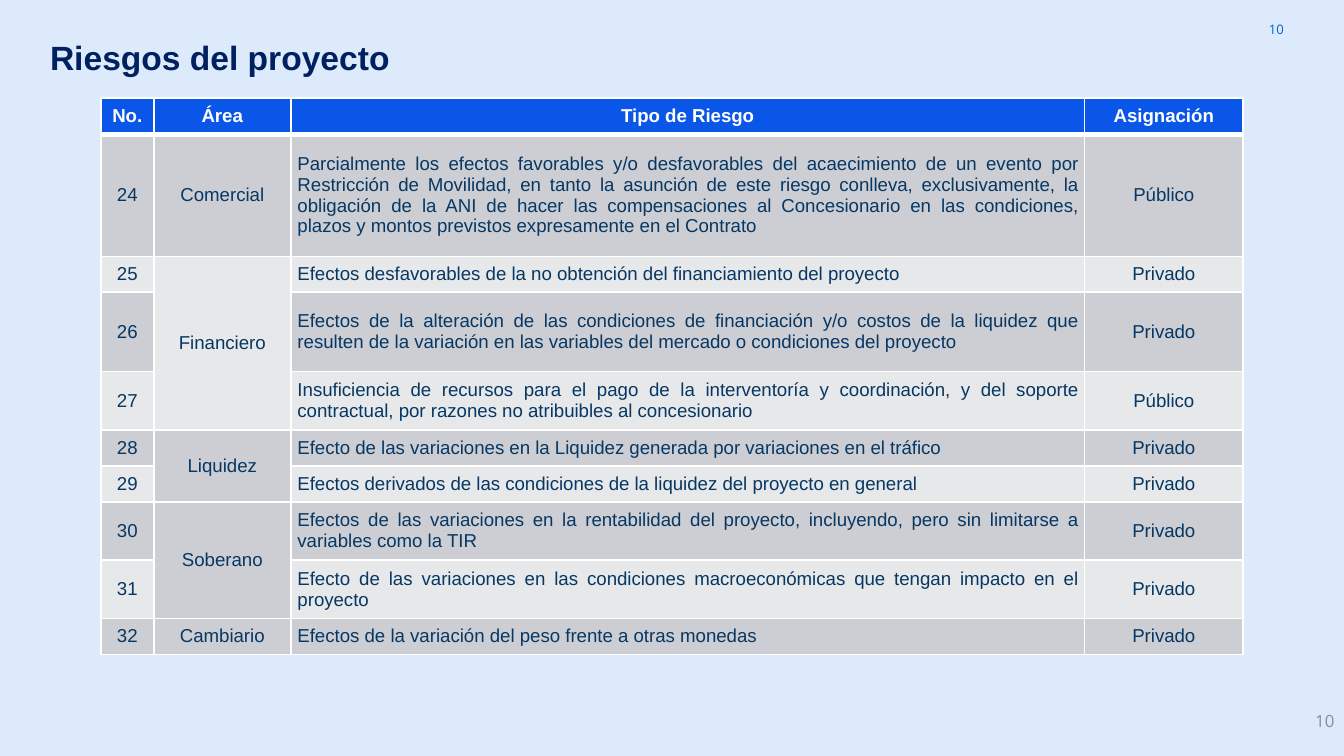
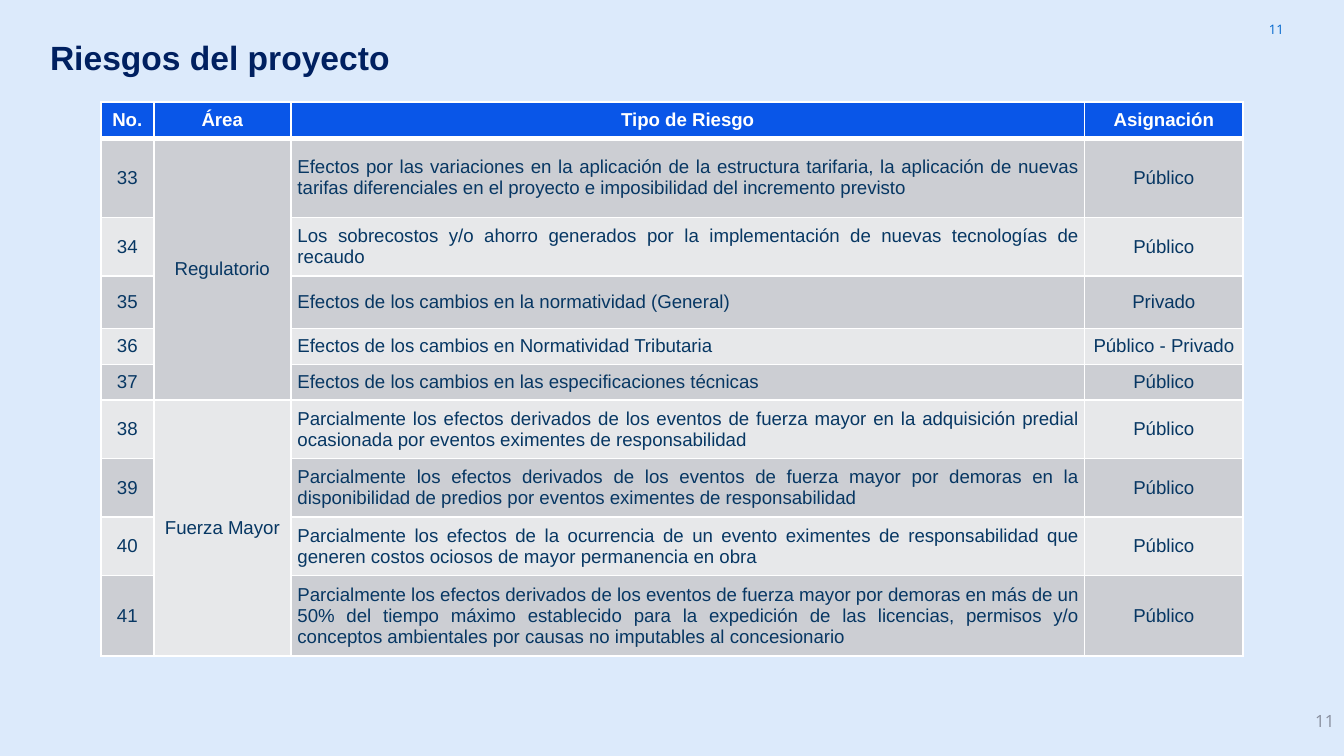
from lxml import etree
from pptx import Presentation
from pptx.dml.color import RGBColor
from pptx.enum.text import MSO_ANCHOR, PP_ALIGN
from pptx.oxml.ns import qn
from pptx.util import Pt

CENTER, JUSTIFY = PP_ALIGN.CENTER, PP_ALIGN.JUSTIFY
LEFT, RIGHT = PP_ALIGN.LEFT, PP_ALIGN.RIGHT
MIDDLE = MSO_ANCHOR.MIDDLE

COLORS = {
    "background": "DCEAFB",
    "title": "002060",
    "top_number": "0066CD",
    "footer_number": "888E9D",
    "header": "0956E8",
    "header_text": "FFFFFF",
    "body_text": "073763",
    "dark_band": "CCCED3",
    "light_band": "E7E8EA",
    "border": "FFFFFF",
}
HEADERS = ["No.", "Área", "Tipo de Riesgo", "Asignación"]
COLUMN_WIDTHS = [28.4, 73.4, 425.2, 85]
COLUMN_ALIGNS = [CENTER, CENTER, JUSTIFY, CENTER]
AREA_COLUMN = 1
CELL_MARGIN = 3.6

# Each risk: area (empty when it continues the one above), risk, assignment, row height
RISK_PAGES = [
    {"page": 10, "first_risk": 24, "top": 52.6, "height": 297.4, "header_height": 18.7, "risks": [
        ("Comercial",
         "Parcialmente los efectos favorables y/o desfavorables del acaecimiento de un evento por "
         "Restricción de Movilidad, en tanto la asunción de este riesgo conlleva, exclusivamente, la "
         "obligación de la ANI de hacer las compensaciones al Concesionario en las condiciones, "
         "plazos y montos previstos expresamente en el Contrato", "Público", 65.5),
        ("Financiero",
         "Efectos desfavorables de la no obtención del financiamiento del proyecto", "Privado", 18.7),
        ("",
         "Efectos de la alteración de las condiciones de financiación y/o costos de la liquidez que "
         "resulten de la variación en las variables del mercado o condiciones del proyecto",
         "Privado", 42.5),
        ("",
         "Insuficiencia de recursos para el pago de la interventoría y coordinación, y del soporte "
         "contractual, por razones no atribuibles al concesionario", "Público", 30.2),
        ("Liquidez",
         "Efecto de las variaciones en la Liquidez generada por variaciones en el tráfico",
         "Privado", 18),
        ("",
         "Efectos derivados de las condiciones de la liquidez del proyecto en general", "Privado", 13),
        ("Soberano",
         "Efectos de las variaciones en la rentabilidad del proyecto, incluyendo, pero sin limitarse a "
         "variables como la TIR", "Privado", 30.2),
        ("",
         "Efecto de las variaciones en las condiciones macroeconómicas que tengan impacto en el "
         "proyecto", "Privado", 24.5),
        ("Cambiario",
         "Efectos de la variación del peso frente a otras monedas", "Privado", 18.7),
    ]},
    {"page": 11, "first_risk": 33, "top": 54.7, "height": 295.9, "header_height": 19.4, "risks": [
        ("Regulatorio",
         "Efectos por las variaciones en la aplicación de la estructura tarifaria, la aplicación de nuevas "
         "tarifas diferenciales en el proyecto e imposibilidad del incremento previsto",
         "Público", 42.5),
        ("",
         "Los sobrecostos y/o ahorro generados por la implementación de nuevas tecnologías de "
         "recaudo", "Público", 22.3),
        ("",
         "Efectos de los cambios en la normatividad (General)", "Privado", 28.1),
        ("",
         "Efectos de los cambios en Normatividad Tributaria", "Público - Privado", 13),
        ("",
         "Efectos de los cambios en las especificaciones técnicas", "Público", 0),
        ("Fuerza Mayor",
         "Parcialmente los efectos derivados de los eventos de fuerza mayor en la adquisición predial "
         "ocasionada por eventos eximentes de responsabilidad", "Público", 27.4),
        ("",
         "Parcialmente los efectos derivados de los eventos de fuerza mayor por demoras en la "
         "disponibilidad de predios por eventos eximentes de responsabilidad", "Público", 29.5),
        ("",
         "Parcialmente los efectos de la ocurrencia de un evento eximentes de responsabilidad que "
         "generen costos ociosos de mayor permanencia en obra", "Público", 28.1),
        ("",
         "Parcialmente los efectos derivados de los eventos de fuerza mayor por demoras en más de un "
         "50% del tiempo máximo establecido para la expedición de las licencias, permisos y/o "
         "conceptos ambientales por causas no imputables al concesionario", "Público", 13.7),
    ]},
]


def rgb(color):
    return RGBColor.from_string(COLORS[color])


class RiskDeck:
    def __init__(self):
        self.prs = Presentation()
        self.prs.slide_width, self.prs.slide_height = Pt(720), Pt(405)
        self.slide = None

    def add_slide(self):
        self.slide = self.prs.slides.add_slide(self.prs.slide_layouts[6])
        self.slide.background.fill.solid()
        self.slide.background.fill.fore_color.rgb = rgb("background")

    def style_text(self, paragraph, size, color, align, font="Arial", bold=False):
        paragraph.alignment = align
        for run in paragraph.runs:
            run.font.name, run.font.size, run.font.bold = font, Pt(size), bold
            run.font.color.rgb = rgb(color)

    def add_text(self, text, box, margins, size, color, align, **style):
        frame = self.slide.shapes.add_textbox(*map(Pt, box)).text_frame
        frame.word_wrap, frame.vertical_anchor = True, MIDDLE
        frame.margin_left = frame.margin_right = Pt(margins[0])
        frame.margin_top = frame.margin_bottom = Pt(margins[1])
        frame.text = text
        self.style_text(frame.paragraphs[0], size, color, align, **style)
        return frame

    def add_title(self, text):
        frame = self.add_text(text, (21.6, 24.5, 663.8, 14.4), (5.2, 2.6), 18, "title", LEFT, bold=True)
        frame.paragraphs[0].line_spacing = 0.9

    def add_page_numbers(self, page):
        self.add_text(str(page), (651.6, 0, 43.2, 31), (7.2, 7.2), 7, "top_number", RIGHT, font="Open Sans")
        self.add_text(str(page), (558, 375.1, 162, 21.6), (5.2, 2.6), 9, "footer_number", RIGHT,
                      font="Open Sans")

    def add_borders(self, cell, bottom):
        properties = cell._tc.get_or_add_tcPr()
        for side, width in (("L", 1), ("R", 1), ("T", 1), ("B", bottom)):
            line = etree.SubElement(properties, qn(f"a:ln{side}"), w=str(Pt(width)))
            fill = etree.SubElement(line, qn("a:solidFill"))
            etree.SubElement(fill, qn("a:srgbClr"), val=COLORS["border"])

    def fill_cell(self, cell, text, fill, color, align, bold=False, bottom=1):
        self.add_borders(cell, bottom)
        cell.fill.solid()
        cell.fill.fore_color.rgb = rgb(fill)
        cell.vertical_anchor = MIDDLE
        cell.margin_left = cell.margin_right = Pt(CELL_MARGIN)
        cell.margin_top = cell.margin_bottom = Pt(CELL_MARGIN)
        cell.text = text
        self.style_text(cell.text_frame.paragraphs[0], 10, color, align, bold=bold)

    def add_risk_table(self, first_risk, top, height, header_height, risks):
        frame = self.slide.shapes.add_table(len(risks) + 1, len(HEADERS), Pt(54), Pt(top),
                                            Pt(sum(COLUMN_WIDTHS)), Pt(height))
        table = frame.table
        for column, width in zip(table.columns, COLUMN_WIDTHS):
            column.width = Pt(width)
        table.rows[0].height = Pt(header_height)
        for column, header in enumerate(HEADERS):
            self.fill_cell(table.cell(0, column), header, "header", "header_text", CENTER,
                           bold=True, bottom=3)

        for row, (area, risk, assignment, row_height) in enumerate(risks, 1):
            table.rows[row].height = Pt(row_height)
            band = "dark_band" if row % 2 else "light_band"
            values = [str(first_risk + row - 1), area, risk, assignment]
            for column, (value, align) in enumerate(zip(values, COLUMN_ALIGNS)):
                self.fill_cell(table.cell(row, column), value, band, "body_text", align)
        self.merge_areas(table, [risk[0] for risk in risks])
        frame.height = Pt(height)

    def merge_areas(self, table, areas):
        """Join each area cell with the empty ones below it."""
        starts = [row for row, area in enumerate(areas, 1) if area]
        ends = [start - 1 for start in starts[1:]] + [len(areas)]
        for start, end in zip(starts, ends):
            if end > start:
                table.cell(start, AREA_COLUMN).merge(table.cell(end, AREA_COLUMN))


def main():
    deck = RiskDeck()
    for risk_page in RISK_PAGES:
        deck.add_slide()
        deck.add_page_numbers(risk_page["page"])
        deck.add_risk_table(risk_page["first_risk"], risk_page["top"], risk_page["height"],
                            risk_page["header_height"], risk_page["risks"])
        deck.add_title("Riesgos del proyecto")
    deck.prs.save("out.pptx")


if __name__ == "__main__":
    main()
